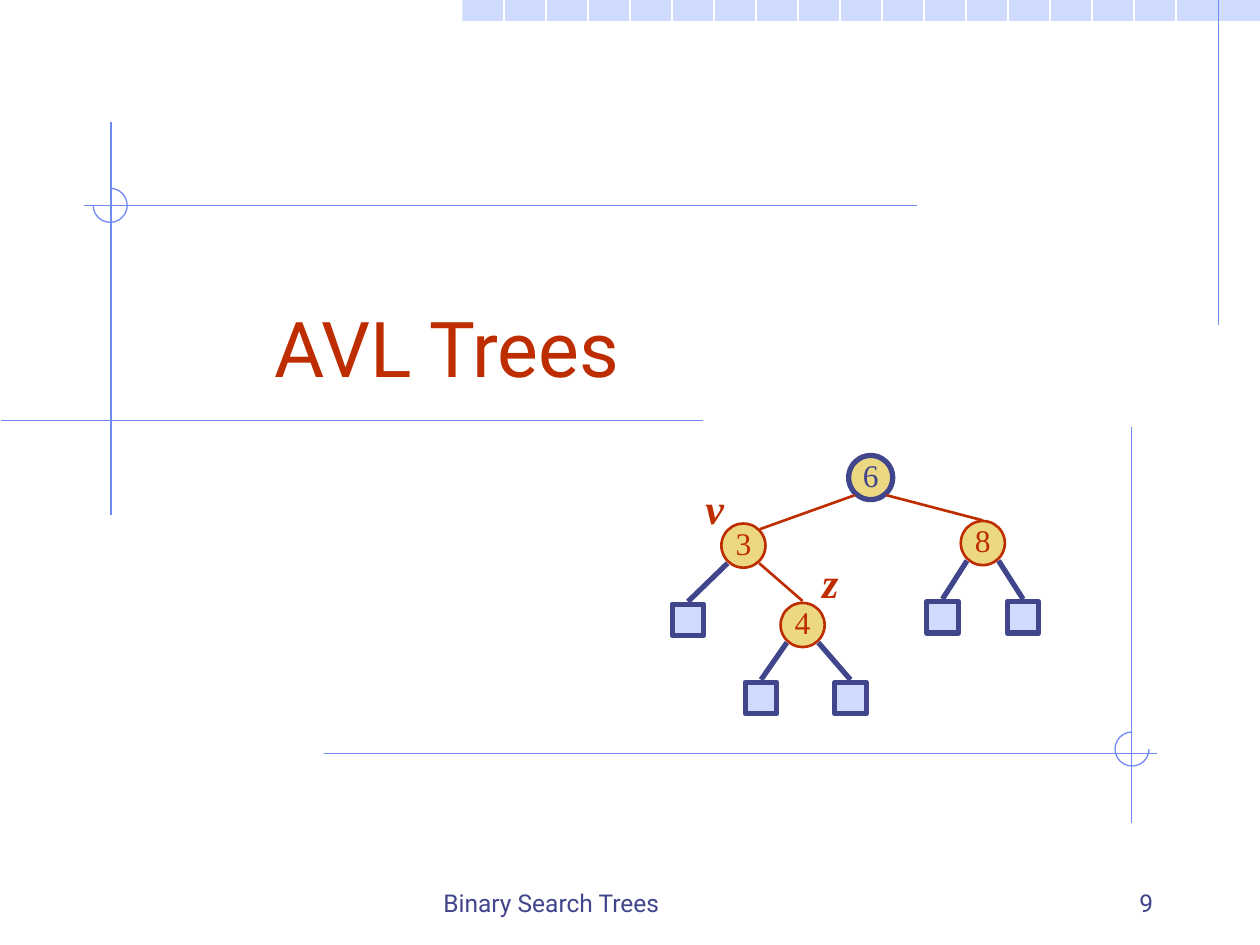
from lxml.etree import SubElement
from pptx import Presentation
from pptx.dml.color import RGBColor
from pptx.enum.shapes import MSO_CONNECTOR, MSO_SHAPE
from pptx.enum.text import MSO_ANCHOR, PP_ALIGN
from pptx.oxml.ns import qn
from pptx.util import Inches, Pt


def rgb(value):
    """Turn a hex string into a colour."""
    return RGBColor.from_string(value)


def write(sp, text, size=14, color="40458C", font="Roboto", bold=False, italic=False,
          align=PP_ALIGN.LEFT, anchor=MSO_ANCHOR.BOTTOM, wrap=True, insets=None):
    """Write one formatted paragraph into a shape."""
    tf = sp.text_frame
    tf.word_wrap = wrap
    tf.vertical_anchor = anchor
    if insets:
        tf.margin_left, tf.margin_top, tf.margin_right, tf.margin_bottom = map(Inches, insets)
    p = tf.paragraphs[0]
    p.alignment = align
    r = p.add_run()
    r.text = text
    r.font.name, r.font.size = font, Pt(size)
    r.font.bold, r.font.italic = bold, italic
    r.font.color.rgb = rgb(color)


class Deck:
    """Style and current slide, measured on a grid of 100 columns by 75 rows."""

    NAVY, RED, BLUE, PALE, GOLD, WHITE = "40458C", "BE2D00", "6F89F7", "CFDBFD", "ECD882", "FFFFFF"
    SERIF = "Times New Roman"
    COLS, ROWS = 100, 75
    RADIUS, HALF_LEAF, GAP = 1.75, 1.25, 0.2

    def __init__(self):
        """Open a deck with one blank slide."""
        self.prs = Presentation()
        self.prs.slide_width, self.prs.slide_height = Inches(10), Inches(7.5)
        self.s = self.prs.slides.add_slide(self.prs.slide_layouts[6])

    def place(self, *cells):
        """Convert alternating columns and rows to lengths."""
        units = self.prs.slide_width / self.COLS, self.prs.slide_height / self.ROWS
        return [round(cell * units[i % 2]) for i, cell in enumerate(cells)]

    def line(self, x1, y1, x2, y2, color=BLUE, width=0.75):
        """Draw a straight line."""
        sp = self.s.shapes.add_connector(MSO_CONNECTOR.STRAIGHT, *self.place(x1, y1, x2, y2))
        sp.line.color.rgb, sp.line.width = rgb(color), Pt(width)
        SubElement(sp._element.spPr, qn("a:effectLst"))

    def shape(self, kind, x, y, w, h, fill=None, color=None, width=0.75):
        """Draw a preset shape."""
        sp = self.s.shapes.add_shape(kind, *self.place(x, y, w, h))
        sp.shadow.inherit = False
        if fill:
            sp.fill.solid()
            sp.fill.fore_color.rgb = rgb(fill)
        else:
            sp.fill.background()
        if color:
            sp.line.color.rgb, sp.line.width = rgb(color), Pt(width)
        else:
            sp.line.fill.background()
        return sp

    def text(self, text, x, y, w, h, **style):
        """Add a text box."""
        write(self.s.shapes.add_textbox(*self.place(x, y, w, h)), text, **style)

    def arc(self, x, y, start, end):
        """Draw an arc around a crossing, clockwise between two angles."""
        sp = self.shape(MSO_SHAPE.ARC, x - 1.35, y - 1.35, 2.7, 2.7, color=self.BLUE)
        sp.adjustments[0], sp.adjustments[1] = start * 0.6, end * 0.6

    def node(self, key, x, y, color=RED, width=1.5):
        """Draw a numbered tree node around its centre."""
        r = self.RADIUS
        sp = self.shape(MSO_SHAPE.OVAL, x - r, y - r, 2 * r, 2 * r, self.GOLD, color, width)
        write(sp, key, size=18, color=color, font=self.SERIF, align=PP_ALIGN.CENTER,
              anchor=MSO_ANCHOR.MIDDLE, wrap=False, insets=(0, 0, 0, 0.05))

    def edge(self, parent, end, color=RED, width=1.5):
        """Join the lower side of a parent node to a point."""
        side = 1.25 if end[0] > parent[0] else -1.25
        self.line(parent[0] + side, parent[1] + 1.4, *end, color, width)

    def leaf(self, parent, x, y):
        """Draw an external node and the edge from its parent."""
        h = self.HALF_LEAF
        self.shape(MSO_SHAPE.RECTANGLE, x - h, y - h, 2 * h, 2 * h, self.PALE, self.NAVY, 3)
        self.edge(parent, (x, y - h - self.GAP), self.NAVY, 3)

    def label(self, text, x, y):
        """Add an italic name beside a tree node."""
        self.text(text, x, y, 3.4, 5, size=24, color=self.RED, font=self.SERIF, bold=True,
                  italic=True, align=PP_ALIGN.CENTER, anchor=MSO_ANCHOR.TOP)


def main():
    """Build the slide."""
    d = Deck()
    d.shape(MSO_SHAPE.RECTANGLE, 36.7, 0, 63.3, 1.67, d.PALE)
    for third in range(12, 29):
        d.line(third * 10 / 3, 0, third * 10 / 3, d.ROWS, d.WHITE)
    for ends in ((96.7, 0, 96.7, 25.8), (8.8, 9.7, 8.8, 40.9), (55.8, 33.4, 0.1, 33.4),
                 (72.8, 16.3, 6.7, 16.3), (25.7, 59.8, 91.8, 59.8), (89.8, 33.9, 89.8, 65.3)):
        d.line(*ends)
    d.arc(8.75, 16.3, 270, 180)
    d.arc(89.85, 59.45, 0, 270)

    d.text("Binary Search Trees", 34.2, 68.3, 31.7, 5)
    d.text("9", 71.7, 68.3, 20.8, 5, align=PP_ALIGN.RIGHT)
    d.text("AVL Trees", 20.8, 19.2, 38.3, 12.5, size=44, color=d.RED)

    nodes = {"6": (69.1, 37.9), "3": (59, 43.3), "8": (78, 43.1), "4": (63.7, 49.6)}
    for key, centre in nodes.items():
        d.node(key, *centre, **({"color": d.NAVY, "width": 3} if key == "6" else {}))
    for parent, child, dx, dy in (("6", "3", 1.3, -1.3), ("6", "8", 0, -1.8), ("3", "4", 0, -1.9)):
        x, y = nodes[child]
        d.edge(nodes[parent], (x + dx, y + dy))
    for parent, x, y in (("3", 54.6, 49.2), ("8", 74.8, 49), ("8", 81.2, 49),
                         ("4", 60.4, 55.4), ("4", 67.5, 55.4)):
        d.leaf(nodes[parent], x, y)
    d.label("v", 55, 37.8)
    d.label("z", 64.2, 43.7)
    d.prs.save("out.pptx")


if __name__ == "__main__":
    main()
